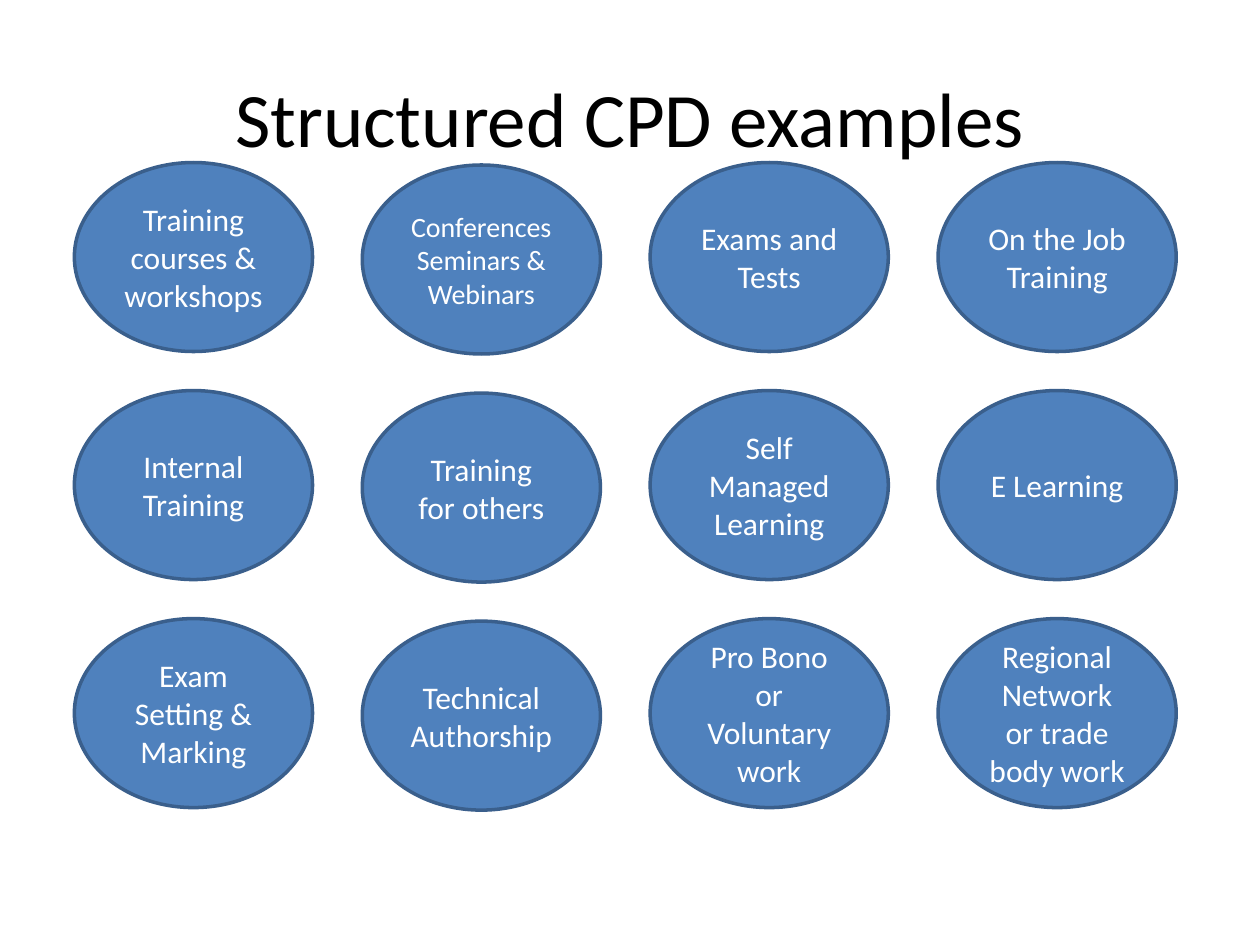
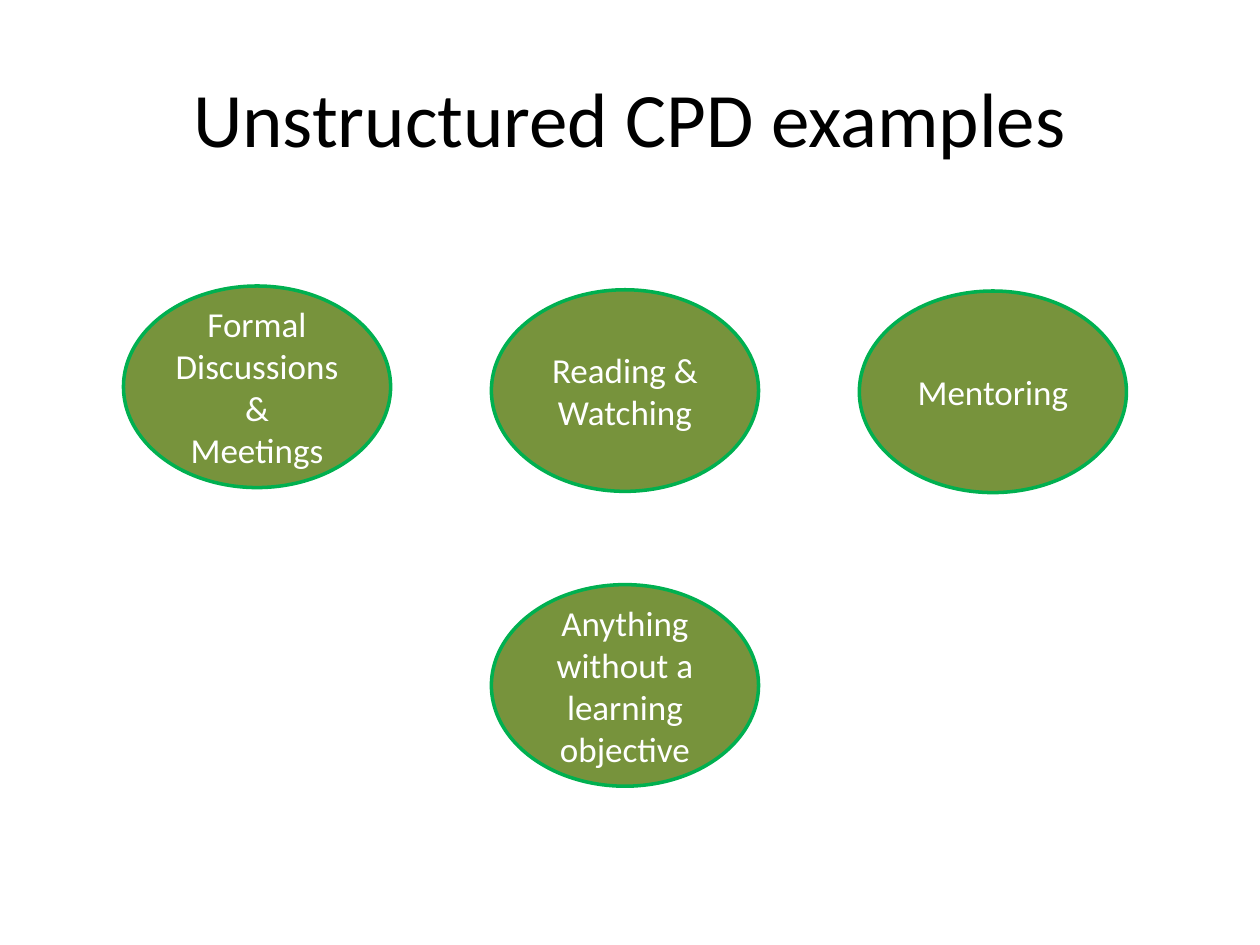
from dataclasses import dataclass

from pptx import Presentation
from pptx import util as u
from pptx.dml import color
from pptx.enum import shapes, text


@dataclass(frozen=True)
class Theme:
    font: str = "Calibri"
    title_color: str = "000000"
    label_color: str = "FFFFFF"
    structured_fill: str = "4F81BD"
    structured_line: str = "3A5F8C"
    unstructured_fill: str = "77933C"
    unstructured_line: str = "00B050"
    title_size: int = 44
    large_size: int = 20
    label_size: int = 18
    small_size: int = 16
    outline: int = 2


THEME = Theme()


@dataclass(frozen=True)
class Example:
    label: str
    column: int
    row: int
    size: int
    drop: float = 0


@dataclass(frozen=True)
class OvalGrid:
    left: float
    top: float
    column_step: float
    row_step: float
    width: float
    height: float
    fill: str
    line: str


STRUCTURED_GRID = OvalGrid(0.59, 1.29, 2.285, 1.81, 1.89, 1.5,
                           THEME.structured_fill, THEME.structured_line)
UNSTRUCTURED_GRID = OvalGrid(0.98, 2.27, 2.92, 2.34, 2.12, 1.6,
                             THEME.unstructured_fill, THEME.unstructured_line)

STRUCTURED_ROWS = (
    ("Training courses & workshops", "Conferences Seminars & Webinars",
     "Exams and Tests", "On the Job Training"),
    ("Internal Training", "Training for others",
     "Self Managed Learning", "E Learning"),
    ("Exam Setting & Marking", "Technical Authorship",
     "Pro Bono or Voluntary work", "Regional Network or trade body work"),
)
SMALL_LABELS = {"Conferences Seminars & Webinars"}
COLUMN_DROPS = (0, 0.02, 0, 0)

STRUCTURED = [
    Example(label, column, row,
            THEME.small_size if label in SMALL_LABELS else THEME.label_size,
            COLUMN_DROPS[column])
    for row, labels in enumerate(STRUCTURED_ROWS)
    for column, label in enumerate(labels)
]
UNSTRUCTURED = [
    Example("Formal Discussions & Meetings", 0, 0, THEME.large_size),
    Example("Reading & Watching", 1, 0, THEME.large_size, 0.03),
    Example("Mentoring", 2, 0, THEME.large_size, 0.04),
    Example("Anything without a learning objective", 1, 1,
            THEME.large_size, 0.03),
]


def rgb(value: str) -> color.RGBColor:
    return color.RGBColor.from_string(value)


def write_centered(shape, wording: str, size: int, text_color: str) -> None:
    frame = shape.text_frame
    frame.word_wrap = True
    frame.vertical_anchor = text.MSO_ANCHOR.MIDDLE
    paragraph = frame.paragraphs[0]
    paragraph.alignment = text.PP_ALIGN.CENTER
    run = paragraph.add_run()
    run.text = wording
    run.font.name = THEME.font
    run.font.size = u.Pt(size)
    run.font.color.rgb = rgb(text_color)


def add_title(slide, wording: str) -> None:
    title = slide.shapes.add_textbox(
        u.Inches(0.5), u.Inches(0.3), u.Inches(9), u.Inches(1.25))
    write_centered(title, wording, THEME.title_size, THEME.title_color)


def add_oval(slide, grid: OvalGrid, example: Example) -> None:
    oval = slide.shapes.add_shape(
        shapes.MSO_SHAPE.OVAL,
        u.Inches(grid.left + example.column * grid.column_step),
        u.Inches(grid.top + example.row * grid.row_step + example.drop),
        u.Inches(grid.width), u.Inches(grid.height))
    oval.shadow.inherit = False
    oval.fill.solid()
    oval.fill.fore_color.rgb = rgb(grid.fill)
    oval.line.color.rgb = rgb(grid.line)
    oval.line.width = u.Pt(THEME.outline)
    write_centered(oval, example.label, example.size, THEME.label_color)


def add_examples_slide(presentation, title: str, grid: OvalGrid,
                       examples: list[Example]) -> None:
    slide = presentation.slides.add_slide(presentation.slide_layouts[6])
    add_title(slide, title)
    for example in examples:
        add_oval(slide, grid, example)


def main() -> None:
    presentation = Presentation()
    presentation.slide_width = u.Inches(10)
    presentation.slide_height = u.Inches(7.5)
    add_examples_slide(presentation, "Structured CPD examples",
                       STRUCTURED_GRID, STRUCTURED)
    add_examples_slide(presentation, "Unstructured CPD examples",
                       UNSTRUCTURED_GRID, UNSTRUCTURED)
    presentation.save("out.pptx")


if __name__ == "__main__":
    main()
